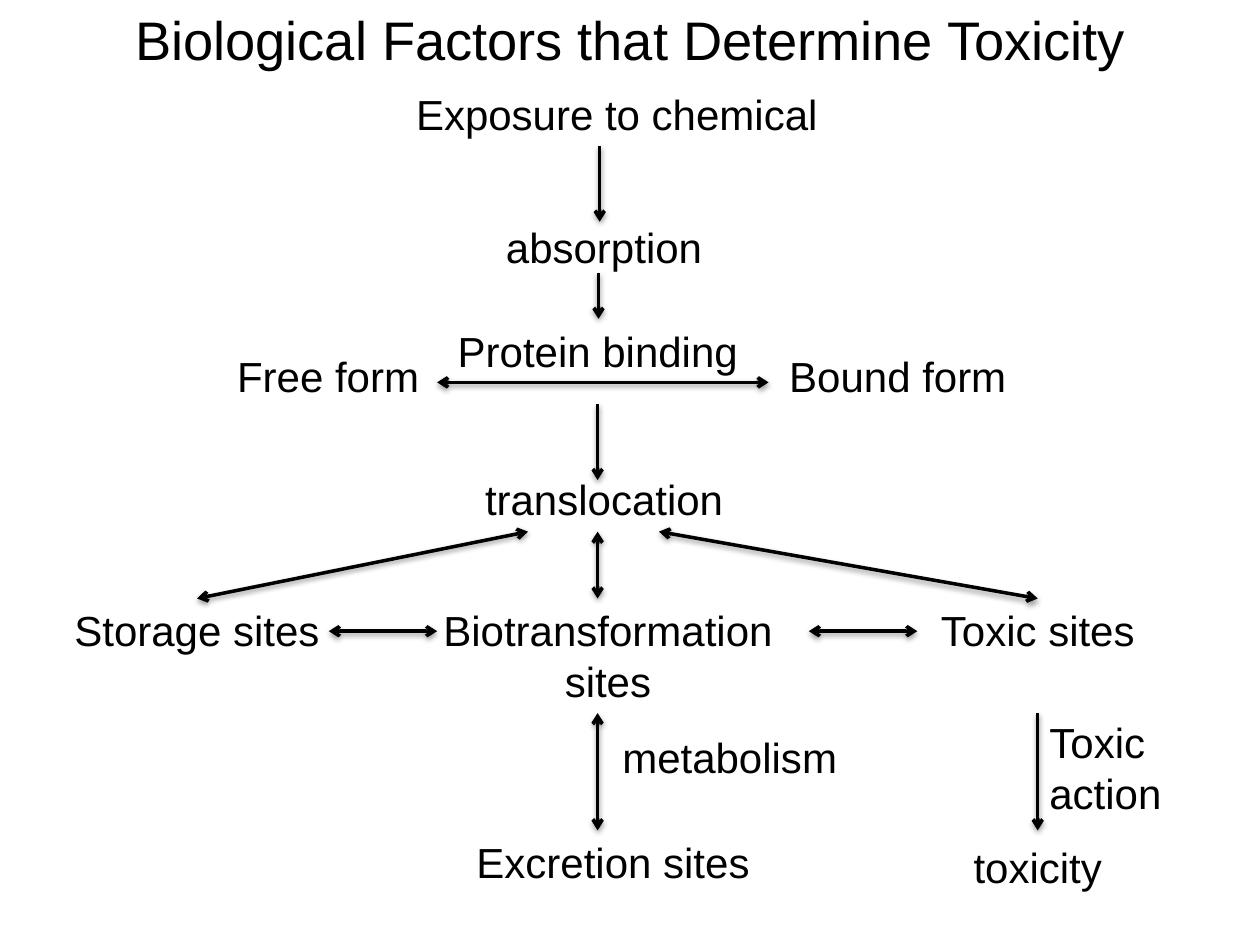
from dataclasses import dataclass
from typing import Any

from lxml.etree import SubElement
from pptx import Presentation
from pptx.dml.color import RGBColor as RGB
from pptx.enum.shapes import MSO_CONNECTOR as CONN
from pptx.enum.text import MSO_AUTO_SIZE as AUTO, PP_ALIGN as ALIGN
from pptx.oxml.ns import qn
from pptx.util import Pt

COLORS = {"ink": "000000", "paper": "FFFFFF"}
TOP = 0


def write(tf, text, size=24, font="Arial", color="ink", align=ALIGN.CENTER):
    """Fill a text frame, one paragraph for each line of text."""
    for i, line in enumerate(text.split("\n")):
        p = tf.paragraphs[0] if i == 0 else tf.add_paragraph()
        p.alignment = align
        r = p.add_run()
        r.text = line
        r.font.name, r.font.size = font, Pt(size)
        r.font.color.rgb = RGB.from_string(COLORS[color])


@dataclass
class Diagram:
    """Flow diagram style together with the slide being drawn."""
    s: Any
    label_width: float = 307.5
    line_height: float = 29.5
    line_width: float = 2

    def text(self, text, x, y, w, h, **fmt):
        """Add a wrapped text box."""
        sp = self.s.shapes.add_textbox(Pt(x), Pt(y), Pt(w), Pt(h))
        tf = sp.text_frame
        tf.word_wrap, tf.auto_size = True, AUTO.SHAPE_TO_FIT_TEXT
        write(tf, text, **fmt)
        return sp

    def label(self, text, cx, y):
        """Add a label centred on cx."""
        h = 6.5 + self.line_height * (text.count("\n") + 1)
        return self.text(text, cx - self.label_width / 2, y, self.label_width, h)

    def arrow(self, x1, y1, x2, y2, both=False, begin=None, end=None):
        """Add a shadowed arrow, joined to the top of a label where given."""
        sp = self.s.shapes.add_connector(CONN.STRAIGHT, Pt(x1), Pt(y1), Pt(x2), Pt(y2))
        if begin is not None:
            sp.begin_connect(begin, TOP)
        if end is not None:
            sp.end_connect(end, TOP)
        sp.line.width = Pt(self.line_width)
        sp.line.color.rgb = RGB.from_string(COLORS["ink"])
        ln = sp.line._get_or_add_ln()
        for tag in ("a:headEnd", "a:tailEnd") if both else ("a:tailEnd",):
            SubElement(ln, qn(tag), type="arrow")
        self.shadow(sp)

    def shadow(self, sp):
        """Give a connector a soft shadow below it."""
        effects = SubElement(sp._element.spPr, qn("a:effectLst"))
        outer = SubElement(effects, qn("a:outerShdw"), blurRad=str(Pt(3.1)),
                           dist=str(Pt(1.6)), dir="5400000", rotWithShape="0")
        color = SubElement(outer, qn("a:srgbClr"), val=COLORS["ink"])
        SubElement(color, qn("a:alpha"), val="38000")


def main():
    """Build the toxicity slide."""
    prs = Presentation()
    prs.slide_width, prs.slide_height = Pt(720), Pt(540)
    s = prs.slides.add_slide(prs.slide_layouts[6])
    s.background.fill.solid()
    s.background.fill.fore_color.rgb = RGB.from_string(COLORS["paper"])
    d = Diagram(s)

    d.text("Biological Factors that Determine Toxicity", 0, 0, 720, 44.6, size=31)
    sites_y, axis, toxic_x = 342, 341.5, 593
    for text, cx, y in (
        ("Exposure to chemical", 352.5, 46.8),
        ("absorption", 345.2, 123.1),
        ("Free form", 187.5, 196.6),
        ("Bound form", 513, 196.6),
        ("Protein binding", 341.6, 182.2),
        ("translocation", 345.2, 267.1),
        ("Biotransformation\nsites", 347.4, sites_y),
        ("Excretion sites", 350.3, 474.5),
        ("toxicity", toxic_x, 477.4),
    ):
        d.label(text, cx, y)
    storage = d.label("Storage sites", 112.6, sites_y)
    toxic = d.label("Toxic sites", toxic_x, sites_y)
    d.text("Toxic\naction", 592.6, 406.1, 105, 65.5, align=ALIGN.LEFT)
    d.text("metabolism", 348.5, 414.7, 145, 36, align=ALIGN.LEFT)

    for x, y1, y2, both in (
        (342.7, 83.5, 126.7, False),
        (342, 156.2, 182.2, False),
        (axis, 231.1, 274.3, False),
        (axis, 303.8, sites_y, True),
        (axis, 407.5, 474.5, True),
        (toxic_x, 407.5, 474.5, False),
    ):
        d.arrow(x, y1, x, y2, both)
    for x1, x2, y in ((249.8, 439.2, 218.5), (187.9, 249.8, 360.7), (462.2, 524.2, 360.7)):
        d.arrow(x1, y, x2, y, both=True)
    d.arrow(112.6, sites_y, 301.7, 303.8, both=True, begin=storage)
    d.arrow(376.6, 303.8, toxic_x, sites_y, both=True, end=toxic)

    prs.save("out.pptx")


if __name__ == "__main__":
    main()
